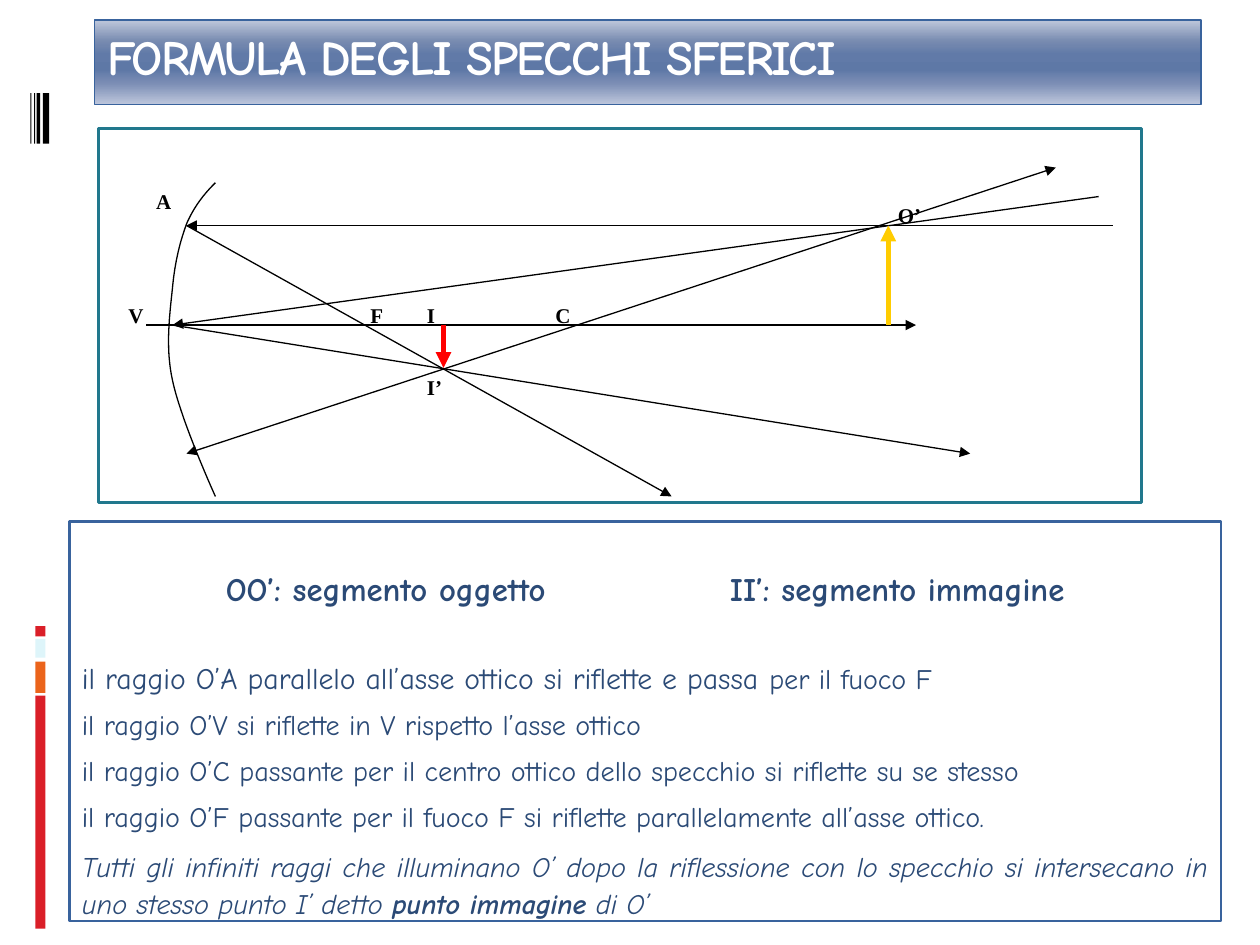
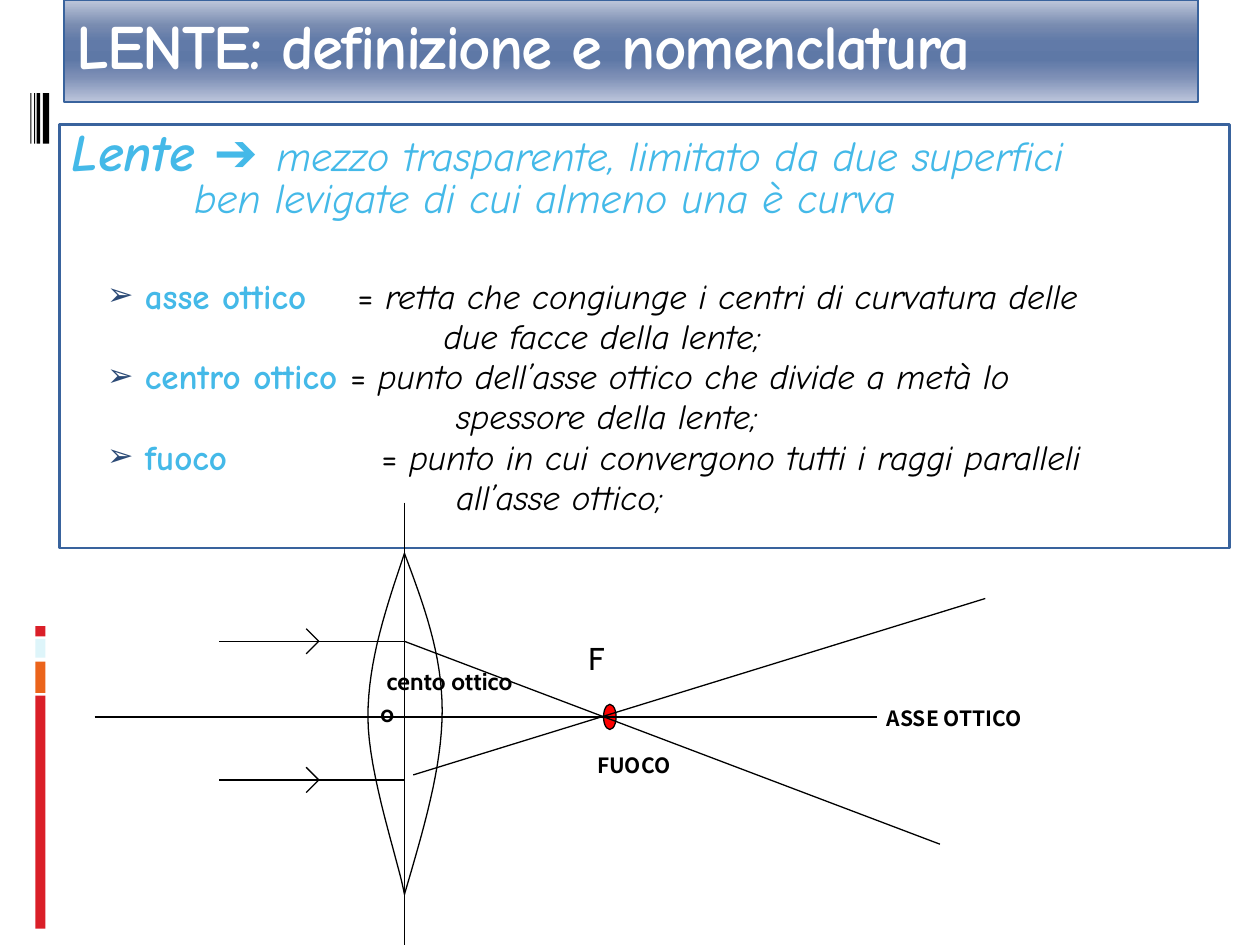
from dataclasses import dataclass

from lxml.etree import SubElement
from pptx import Presentation
from pptx.dml.color import RGBColor
from pptx.enum.shapes import MSO_CONNECTOR, MSO_SHAPE
from pptx.enum.text import MSO_ANCHOR, MSO_AUTO_SIZE, PP_ALIGN
from pptx.oxml.ns import qn
from pptx.util import Pt

PX = 9144


@dataclass(frozen=True)
class Theme:
    white: str = "FFFFFF"
    black: str = "000000"
    navy: str = "2B4A76"
    sky: str = "44B9E8"
    border: str = "39639D"
    panel_border: str = "21788D"
    red: str = "DA1F28"
    orange: str = "EB641B"
    ice: str = "DEF5FA"
    object_arrow: str = "FFCC00"
    image_arrow: str = "FF0000"
    title_gradient: tuple = (
        (0, "BEC7DB"), (25, "788BB0"), (40, "617AA8"), (50, "5E78A6"),
        (60, "617AA8"), (75, "7C8EB5"), (100, "BDC6DC"))
    hand_font: str = "Comic Neue"
    serif_font: str = "Times New Roman"
    label_font: str = "Noto Sans CJK KR"
    plain_font: str = "Cabin"
    heading_size: float = 18.7
    first_ray_size: float = 17
    ray_size: float = 16.1
    lens_size: float = 30
    definition_size: float = 24
    term_size: float = 20
    letter_size: float = 18
    center_size: float = 14
    label_size: float = 12
    thin: float = 0.75
    thick: float = 3


theme = Theme()


def write_paragraph(text_frame, runs, size, color=theme.black, font=theme.hand_font,
                    align=PP_ALIGN.LEFT, before=0, spacing=1.0, margin=0, indent=0, bullet=None):
    first = text_frame.paragraphs[0]
    paragraph = text_frame.add_paragraph() if first.runs else first
    paragraph.alignment = align
    paragraph.space_before = Pt(before)
    paragraph.line_spacing = spacing
    properties = paragraph._p.get_or_add_pPr()
    properties.set("marL", str(margin * PX))
    properties.set("indent", str(indent * PX))
    properties.set("defTabSz", str(100 * PX))
    if bullet:
        paragraph.level = 1
        bullet_color = SubElement(properties, qn("a:buClr"))
        SubElement(bullet_color, qn("a:srgbClr"), val=theme.navy)
        SubElement(properties, qn("a:buSzPct"), val="90000")
        SubElement(properties, qn("a:buChar"), char=bullet)
    else:
        SubElement(properties, qn("a:buNone"))
    for text, style in runs:
        run = paragraph.add_run()
        run.text = text
        run.font.name = font
        run.font.size = Pt(style.get("size", size))
        run.font.bold = style.get("bold", False)
        run.font.italic = style.get("italic", False)
        run.font.color.rgb = RGBColor.from_string(style.get("color", color))
        if "tracking" in style:
            run.font._element.set("spc", str(style["tracking"] * 100))


def draw_line(slide, start, end, arrows=(), color=theme.black, width=theme.thin):
    line = slide.shapes.add_connector(
        MSO_CONNECTOR.STRAIGHT, *(value * PX for value in (*start, *end)))
    line.line.color.rgb = RGBColor.from_string(color)
    line.line.width = Pt(width)
    outline = line.line._get_or_add_ln()
    for arrow in arrows:
        SubElement(outline, qn(f"a:{arrow}"), type="triangle")
    SubElement(line.element.spPr, qn("a:effectLst"))


presentation = Presentation()
presentation.slide_width = 1000 * PX
presentation.slide_height = 750 * PX

side_bars = [
    (28, 552, 8, 185, theme.red), (28, 525, 8, 25, theme.orange),
    (28, 507, 8, 15, theme.ice), (28, 497, 8, 8, theme.red),
    (34, 74, 5, 40, theme.black), (29, 74, 3, 40, theme.black),
    (27, 74, 1, 40, theme.black), (24, 74, 1, 40, theme.black)]
slide_frames = [
    ("FORMULA DEGLI SPECCHI SFERICI", 28, (75, 16, 878, 67), (55, 414, 914, 317), 46),
    ("LENTE: definizione e nomenclatura", 36, (51, 0, 900, 81), (47, 99, 929, 336), 5)]

for title_text, title_size, title_box, body_box, body_inset in slide_frames:
    slide = presentation.slides.add_slide(presentation.slide_layouts[1])
    title, body = slide.shapes.title, slide.placeholders[1]
    for shape, box, line_width in ((title, title_box, 0.94), (body, body_box, 1.5)):
        shape.left, shape.top, shape.width, shape.height = (value * PX for value in box)
        shape.line.color.rgb = RGBColor.from_string(theme.border)
        shape.line.width = Pt(line_width)
        shape.text_frame.word_wrap = True
        shape.text_frame.auto_size = MSO_AUTO_SIZE.NONE
    title.fill.gradient()
    title.fill.gradient_angle = 270
    stops = title.element.spPr.find(".//" + qn("a:gsLst"))
    stops.clear()
    for position, color in theme.title_gradient:
        stop = SubElement(stops, qn("a:gs"), pos=str(position * 1000))
        SubElement(stop, qn("a:srgbClr"), val=color)
    title.text_frame.vertical_anchor = MSO_ANCHOR.MIDDLE
    title.text_frame.margin_top = 0
    title.text_frame.margin_bottom = 11 * PX
    write_paragraph(title.text_frame, [(title_text, {"bold": True, "tracking": -1})],
                    title_size, theme.white)
    body.fill.solid()
    body.fill.fore_color.rgb = RGBColor.from_string(theme.white)
    body.text_frame.vertical_anchor = MSO_ANCHOR.TOP
    body.text_frame.margin_top = body_inset * PX
    for left, top, width, height, color in side_bars:
        bar = slide.shapes.add_shape(
            MSO_SHAPE.RECTANGLE, left * PX, top * PX, width * PX, height * PX)
        bar.shadow.inherit = False
        bar.fill.solid()
        bar.fill.fore_color.rgb = RGBColor.from_string(color)
        bar.line.fill.background()

mirror_slide, lens_slide = presentation.slides

mirror_text = mirror_slide.placeholders[1].text_frame
write_paragraph(
    mirror_text, [("OO’: segmento oggetto\t\tII’: segmento immagine", {"bold": True})],
    theme.heading_size, theme.navy, align=PP_ALIGN.CENTER, spacing=0.7)
ray_rules = [
    [("il raggio O’A parallelo all’asse ottico si riflette e passa ",
      {"size": theme.first_ray_size}),
     ("per il fuoco F", {})],
    [("il raggio O’V si riflette in V rispetto l’asse ottico", {})],
    [("il raggio O’C passante per il centro ottico dello specchio si riflette su se stesso", {})],
    [("il raggio O’F passante per il fuoco F si riflette parallelamente all’asse ottico.", {})]]
for index, runs in enumerate(ray_rules):
    write_paragraph(mirror_text, runs, theme.ray_size, theme.navy,
                    align=PP_ALIGN.JUSTIFY, before=7 if index else 30)
write_paragraph(mirror_text, [
    ("Tutti gli infiniti raggi che illuminano O’ dopo la riflessione con lo specchio si "
     "intersecano in uno stesso punto I’ detto ", {"italic": True}),
    ("punto immagine", {"italic": True, "bold": True}),
    (" di O’", {"italic": True})],
    theme.ray_size, theme.navy, align=PP_ALIGN.JUSTIFY, before=7, spacing=1.1)

panel = mirror_slide.shapes.add_shape(
    MSO_SHAPE.RECTANGLE, 78 * PX, 102 * PX, 828 * PX, 297 * PX)
panel.shadow.inherit = False
panel.fill.solid()
panel.fill.fore_color.rgb = RGBColor.from_string(theme.white)
panel.line.color.rgb = RGBColor.from_string(theme.panel_border)
panel.line.width = Pt(1.5)

lens_text = lens_slide.placeholders[1].text_frame
write_paragraph(lens_text, [
    ("Lente ➔ ", {"bold": True, "italic": True, "size": theme.lens_size}),
    ("mezzo trasparente, limitato da due superfici", {"italic": True})],
    theme.definition_size, theme.sky, spacing=0.8)
write_paragraph(lens_text, [("ben levigate di cui almeno una è curva", {"italic": True})],
                theme.definition_size, theme.sky, spacing=0.8, margin=97)
definitions = [
    ("asse ottico", 22, "retta che congiunge i centri di curvatura delle",
     "due facce della lente;", 295),
    ("centro ottico", 0, "punto dell’asse ottico che divide a metà lo",
     "spessore della lente;", 305),
    ("fuoco", 81, "punto in cui convergono tutti i raggi paralleli",
     "all’asse ottico;", 305)]
for index, (term, gap, meaning, continuation, margin) in enumerate(definitions):
    write_paragraph(lens_text, [
        (term, {"bold": True, "color": theme.sky}),
        (" ", {"bold": True, "tracking": gap}),
        ("= ", {}),
        (meaning, {"italic": True})],
        theme.term_size, before=3.8 if index else 34.5, spacing=0.8,
        margin=58, indent=-30, bullet="➢")
    write_paragraph(lens_text, [(continuation, {"italic": True})],
                    theme.term_size, before=3.8, spacing=0.8, margin=margin)

mirror_style = (theme.serif_font, theme.label_size, True)
lens_style = (theme.label_font, theme.label_size, True)
center_style = (theme.plain_font, theme.center_size, True)
focus_style = (theme.plain_font, theme.letter_size, False)
labels = [
    (mirror_slide, ["I"], (329, 235, 45, 34), mirror_style, PP_ALIGN.LEFT),
    (mirror_slide, ["O’"], (671, 156, 70, 34), mirror_style, PP_ALIGN.RIGHT),
    (mirror_slide, ["A"], (114, 145, 45, 34), mirror_style, PP_ALIGN.LEFT),
    (mirror_slide, ["V"], (92, 235, 45, 34), mirror_style, PP_ALIGN.LEFT),
    (mirror_slide, ["C"], (431, 235, 45, 34), mirror_style, PP_ALIGN.LEFT),
    (mirror_slide, ["F"], (284, 235, 45, 34), mirror_style, PP_ALIGN.LEFT),
    (mirror_slide, ["I’"], (329, 292, 45, 34), mirror_style, PP_ALIGN.LEFT),
    (lens_slide, ["FUOCO"], (464, 592, 136, 30), lens_style, PP_ALIGN.LEFT),
    (lens_slide, ["ASSE OTTICO"], (694, 555, 200, 30), lens_style, PP_ALIGN.LEFT),
    (lens_slide, ["F"], (457, 502, 35, 40), focus_style, PP_ALIGN.LEFT),
    (lens_slide, ["cento ottico", "o"], (292, 524, 137, 58), center_style, PP_ALIGN.LEFT)]
for slide, lines, box, (font, size, bold), align in labels:
    label = slide.shapes.add_textbox(*(value * PX for value in box))
    label.text_frame.word_wrap = True
    if lines == ["I"]:
        label.fill.solid()
        label.fill.fore_color.rgb = RGBColor.from_string(theme.white)
        fill_color = label.element.spPr.find(".//" + qn("a:srgbClr"))
        SubElement(fill_color, qn("a:alpha"), val="50000")
    for index, text in enumerate(lines):
        write_paragraph(label.text_frame, [(text, {"bold": bold})], size, font=font,
                        align=align, before=index, margin=5 * (len(lines) - 1 - index))

curves = [
    (mirror_slide, (171, 145), [
        ((162, 154), (154, 164), (148, 178)), ((143, 192), (139, 207), (137, 228)),
        ((135, 248), (131, 275), (137, 302)), ((143, 330), (163, 376), (171, 394))]),
    (lens_slide, (321, 439), [
        ((307, 481), (292, 524), (292, 569)), ((292, 614), (317, 686), (321, 710))]),
    (lens_slide, (321, 439), [
        ((336, 479), (351, 519), (351, 564)), ((351, 609), (336, 659), (321, 710))])]
steps = 16
for slide, start, segments in curves:
    points, anchor = [], start
    for control_one, control_two, end in segments:
        for step in range(1, steps + 1):
            t = step / steps
            points.append(tuple(
                round(PX * ((1 - t) ** 3 * a + 3 * t * (1 - t) ** 2 * b
                            + 3 * t ** 2 * (1 - t) * c + t ** 3 * d))
                for a, b, c, d in zip(anchor, control_one, control_two, end)))
        anchor = end
    builder = slide.shapes.build_freeform(start[0] * PX, start[1] * PX)
    builder.add_line_segments(points, close=False)
    curve = builder.convert_to_shape()
    curve.shadow.inherit = False
    curve.fill.background()
    curve.line.color.rgb = RGBColor.from_string(theme.black)
    curve.line.width = Pt(theme.thin)

both_ends = ("headEnd", "tailEnd")
mirror_rays = [
    ((116, 258), (727, 258), ("tailEnd",)), ((883, 179), (148, 179), ("tailEnd",)),
    ((148, 179), (533, 394), ("tailEnd",)), ((137, 258), (770, 360), ("tailEnd",)),
    ((838, 133), (148, 360), both_ends), ((137, 258), (872, 156), ("headEnd",))]
for start, end, arrows in mirror_rays:
    draw_line(mirror_slide, start, end, arrows)
draw_line(mirror_slide, (705, 258), (705, 179), ("tailEnd",), theme.object_arrow, theme.thick)
draw_line(mirror_slide, (352, 258), (352, 292), ("tailEnd",), theme.image_arrow, theme.thick)

focus = lens_slide.shapes.add_shape(
    MSO_SHAPE.FLOWCHART_CONNECTOR, 479 * PX, 559 * PX, 10 * PX, 20 * PX)
focus.shadow.inherit = False
focus.fill.solid()
focus.fill.fore_color.rgb = RGBColor.from_string(theme.image_arrow)
focus.line.color.rgb = RGBColor.from_string(theme.black)
focus.line.width = Pt(theme.thin)

lens_rays = [
    ((321, 399), (321, 750)), ((75, 569), (696, 569)),
    ((321, 509), (746, 670)), ((328, 615), (782, 475))]
for start, end in lens_rays:
    draw_line(lens_slide, start, end)
for ray_y in (509, 619):
    draw_line(lens_slide, (174, ray_y), (321, ray_y))
    for offset in (-10, 10):
        draw_line(lens_slide, (243, ray_y + offset), (253, ray_y))

presentation.save("out.pptx")
